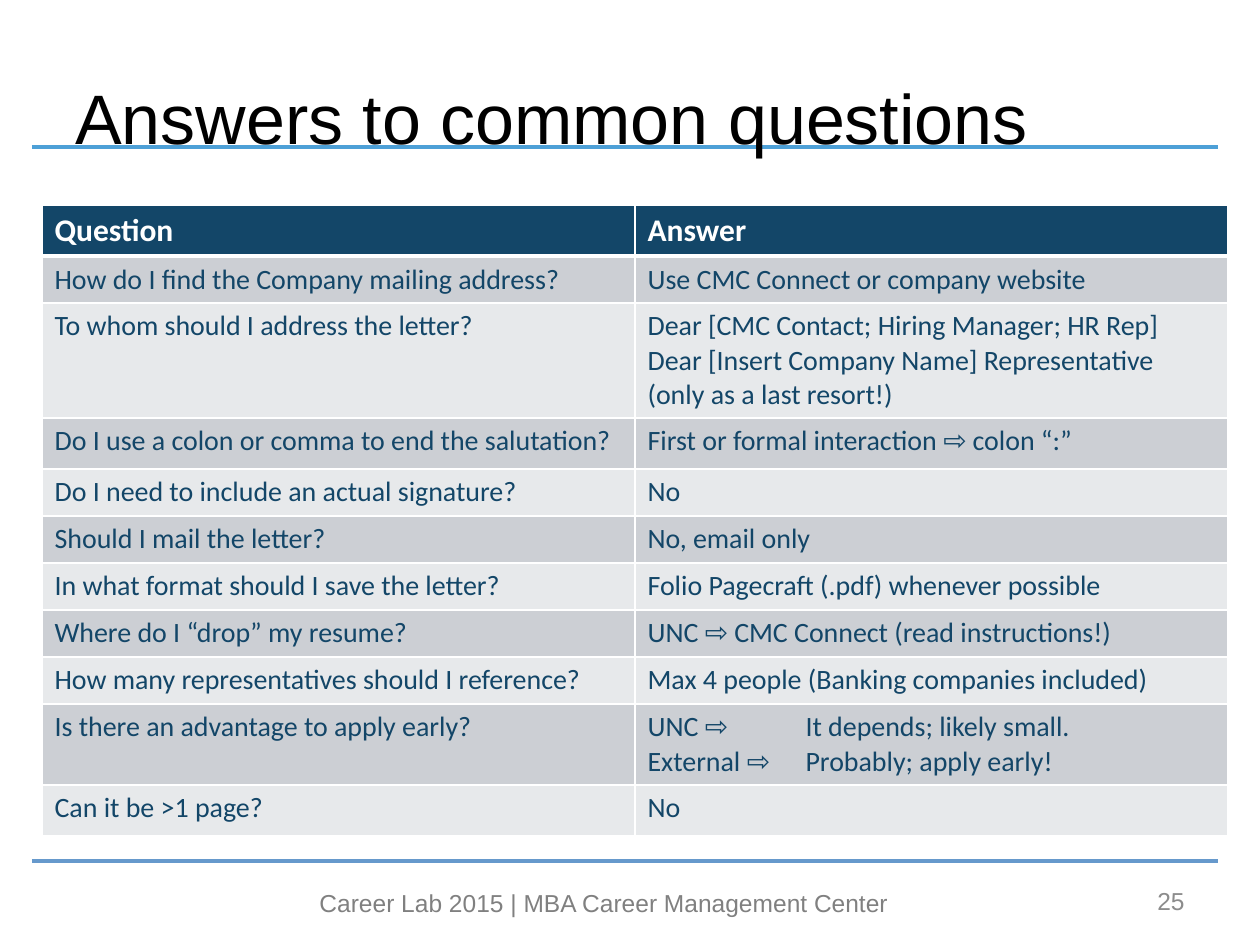
from lxml.etree import SubElement
from pptx import Presentation
from pptx.dml.color import RGBColor
from pptx.enum.shapes import MSO_CONNECTOR
from pptx.enum.text import MSO_ANCHOR, PP_ALIGN
from pptx.oxml.ns import qn
from pptx.util import Emu, Pt

# Content: each cell is a list of paragraphs
HEADER = (["Question"], ["Answer"])
QUESTIONS = [
    (["How do I find the Company mailing address?"], ["Use CMC Connect or company website"]),
    (["To whom should I address the letter?"],
     ["Dear [CMC Contact; Hiring Manager; HR Rep]",
      "Dear [Insert Company Name] Representative (only as a last resort!)"]),
    (["Do I use a colon or comma to end the salutation?"],
     ["First or formal interaction ⇨ colon “:”"]),
    (["Do I need to include an actual signature?"], ["No"]),
    (["Should I mail the letter?"], ["No, email only"]),
    (["In what format should I save the letter?"], ["Folio Pagecraft (.pdf) whenever possible"]),
    (["Where do I “drop” my resume?"], ["UNC ⇨ CMC Connect (read instructions!)"]),
    (["How many representatives should I reference?"],
     ["Max 4 people (Banking companies included)"]),
    (["Is there an advantage to apply early?"],
     ["UNC ⇨ \tIt depends; likely small.", "External ⇨ \tProbably; apply early!"]),
    (["Can it be >1 page?"], ["No"]),
]
COLORS = {
    "title": "000000", "footer": "808080", "number": "8C8C8C",
    "top rule": "4DA0D7", "bottom rule": "6699CC",
    "navy": "134668", "white": "FFFFFF", "dark band": "CCCFD4", "light band": "E7E9EB",
}
FORMATS = {
    "title": {"name": "Arial", "size": Pt(40)},
    "footer": {"name": "Arial", "size": Pt(14)},
    "number": {"name": "Arial", "size": Pt(14)},
    "header": {"name": "Calibri", "size": Pt(18), "bold": True},
    "body": {"name": "Calibri", "size": Pt(16), "bold": False},
}
# Left, top, width, height in px, then alignment and anchor
TEXT_BOXES = [
    ("title", "Answers to common questions", (63, 38, 1134, 158), PP_ALIGN.LEFT, MSO_ANCHOR.MIDDLE),
    ("footer", "Career Lab 2015 | MBA Career Management Center", (305, 882, 598, 43),
     PP_ALIGN.CENTER, MSO_ANCHOR.TOP),
    ("number", "25", (903, 876, 294, 50), PP_ALIGN.RIGHT, MSO_ANCHOR.MIDDLE),
]
RULES = [("bottom rule", 861), ("top rule", 147)]
RULE_LEFT, RULE_RIGHT = 32, 1218
TABLE_LEFT, TABLE_TOP, COLUMN_WIDTH = 42, 205, 593
ROW_HEIGHTS = [51, 47, 115, 51, 47, 47, 47, 47, 47, 81, 51]
ANSWER_TAB = 158


def px(value):
    return Emu(round(value * 914400 / 126))


def color(name):
    return RGBColor.from_string(COLORS[name])


def write(paragraph, text, style, color_name):
    run = paragraph.add_run()
    run.text = text
    for attribute, value in FORMATS[style].items():
        setattr(run.font, attribute, value)
    run.font.color.rgb = color(color_name)


def add_rule(slide, name, y):
    rule = slide.shapes.add_connector(
        MSO_CONNECTOR.STRAIGHT, px(RULE_LEFT), px(y), px(RULE_RIGHT), px(y))
    rule.line.color.rgb = color(name)
    rule.line.width = Pt(2)
    SubElement(rule._element.spPr, qn("a:effectLst"))


def add_text(slide, name, text, box, alignment, anchor):
    frame = slide.shapes.add_textbox(*map(px, box)).text_frame
    frame.word_wrap = True
    frame.vertical_anchor = anchor
    paragraph = frame.paragraphs[0]
    paragraph.alignment = alignment
    write(paragraph, text, name, name)


def add_borders(cell, top, bottom):
    properties = cell._tc.get_or_add_tcPr()
    for side, width in (("L", 1), ("R", 1), ("T", top), ("B", bottom)):
        line = SubElement(properties, qn(f"a:ln{side}"), w=str(Pt(width)))
        fill = SubElement(line, qn("a:solidFill"))
        SubElement(fill, qn("a:srgbClr"), val=COLORS["white"])


def fill_cell(cell, lines, row_index):
    is_header = row_index == 0
    add_borders(cell, top=3 if row_index == 1 else 1, bottom=3 if is_header else 1)
    cell.fill.solid()
    band = "dark band" if row_index % 2 else "light band"
    cell.fill.fore_color.rgb = color("navy" if is_header else band)
    for index, text in enumerate(lines):
        frame = cell.text_frame
        paragraph = frame.add_paragraph() if index else frame.paragraphs[0]
        if "\t" in text:
            tabs = SubElement(paragraph._p.get_or_add_pPr(), qn("a:tabLst"))
            SubElement(tabs, qn("a:tab"), pos=str(px(ANSWER_TAB)), algn="l")
        write(paragraph, text, "header" if is_header else "body",
              "white" if is_header else "navy")


def add_question_table(slide):
    rows = [HEADER, *QUESTIONS]
    table = slide.shapes.add_table(
        len(rows), len(HEADER), px(TABLE_LEFT), px(TABLE_TOP),
        px(COLUMN_WIDTH * len(HEADER)), px(sum(ROW_HEIGHTS))).table
    for column in table.columns:
        column.width = px(COLUMN_WIDTH)
    for row_index, (cells, height) in enumerate(zip(rows, ROW_HEIGHTS)):
        table.rows[row_index].height = px(height)
        for column_index, lines in enumerate(cells):
            fill_cell(table.cell(row_index, column_index), lines, row_index)


def main():
    presentation = Presentation()
    presentation.slide_width, presentation.slide_height = px(1260), px(945)
    slide = presentation.slides.add_slide(presentation.slide_layouts[6])
    # Rules above and below the table
    for name, y in RULES:
        add_rule(slide, name, y)
    # Title, footer and slide number
    for text_box in TEXT_BOXES:
        add_text(slide, *text_box)
    # Questions and answers
    add_question_table(slide)
    presentation.save("out.pptx")


if __name__ == "__main__":
    main()
